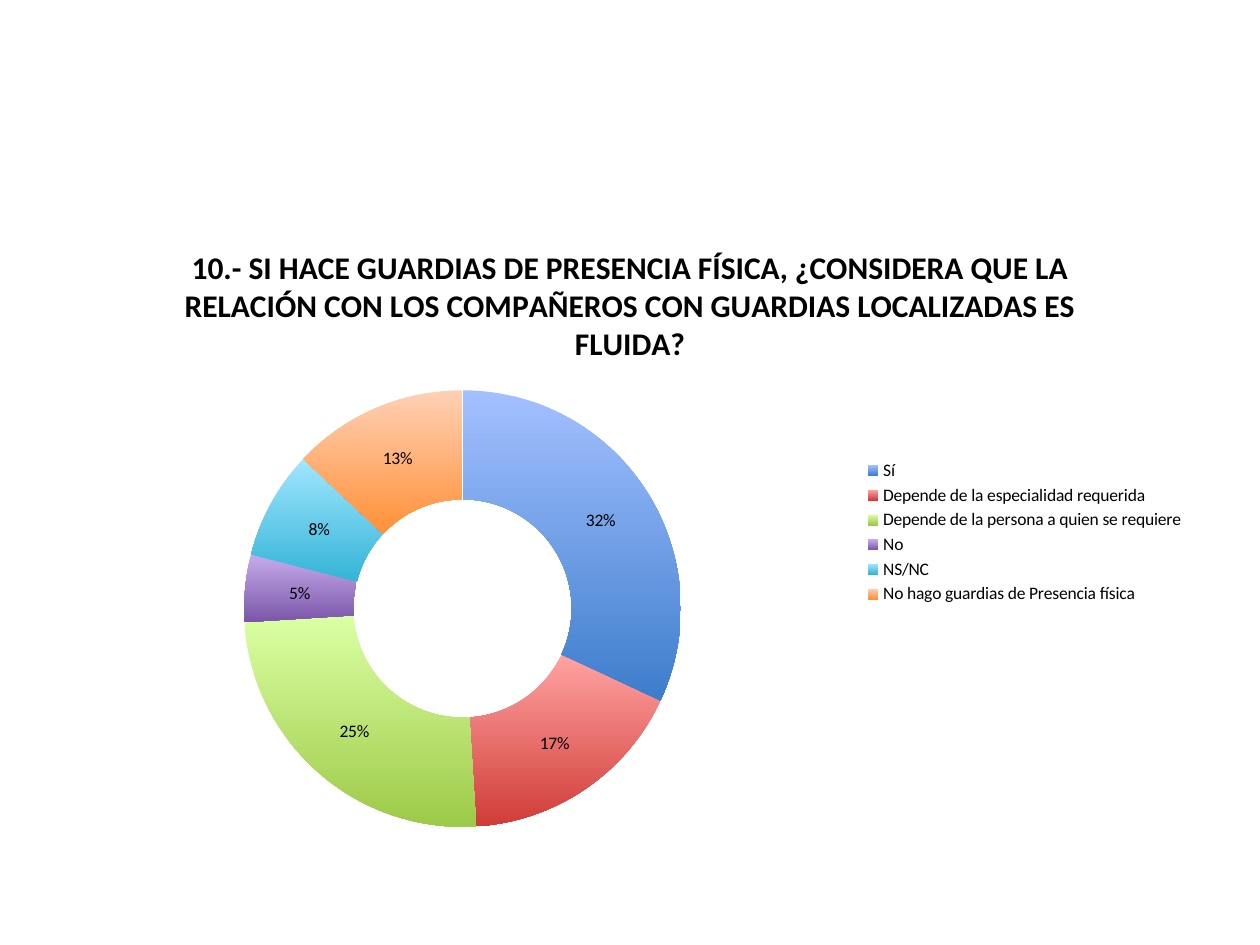
from dataclasses import dataclass

from pptx import Presentation
from pptx.chart.data import CategoryChartData
from pptx.dml.color import RGBColor
from pptx.enum.chart import XL_CHART_TYPE, XL_LEGEND_POSITION
from pptx.util import Inches, Pt

DOUGHNUT = XL_CHART_TYPE.DOUGHNUT
LEGEND_RIGHT = XL_LEGEND_POSITION.RIGHT
TOP_TO_BOTTOM = 270


@dataclass(frozen=True)
class Theme:
    font: str = "Calibri"
    text: str = "000000"
    title_size: int = 18
    body_size: int = 10


THEME = Theme()
QUESTION = (
    "10.- SI HACE GUARDIAS DE PRESENCIA FÍSICA, ¿CONSIDERA QUE LA RELACIÓN "
    "CON LOS COMPAÑEROS CON GUARDIAS LOCALIZADAS ES FLUIDA?"
)
# Answer, percentage, gradient colours from top to bottom
ANSWERS = [
    ("Sí", 32, ("A3C0FF", "3D7DCC")),
    ("Depende de la especialidad requerida", 17, ("FFA3A1", "D03C38")),
    ("Depende de la persona a quien se requiere", 25, ("DAFFA3", "9DCA48")),
    ("No", 5, ("C5ACEC", "7B56A8")),
    ("NS/NC", 8, ("A0E6FF", "34B4D6")),
    ("No hago guardias de Presencia física", 13, ("FFD0B5", "FF9138")),
]


def style_font(font, size=THEME.body_size, bold=False):
    font.name = THEME.font
    font.size = Pt(size)
    font.bold = bold
    font.color.rgb = RGBColor.from_string(THEME.text)


def add_text(frame, text, **style):
    para = frame.paragraphs[0]
    span = para.add_run()
    span.text = text
    style_font(span.font, **style)


def fill_gradient(fill, colours):
    fill.gradient()
    fill.gradient_angle = TOP_TO_BOTTOM
    for stop, colour in zip(fill.gradient_stops, colours):
        stop.color.rgb = RGBColor.from_string(colour)


def add_answer_chart(page, left, top, width, height):
    data = CategoryChartData()
    data.categories = [answer for answer, _, _ in ANSWERS]
    data.add_series(QUESTION, [share for _, share, _ in ANSWERS])
    chart = page.shapes.add_chart(DOUGHNUT, left, top, width, height, data).chart
    style_font(chart.font)

    chart.has_title = True
    add_text(chart.chart_title.text_frame, QUESTION,
             size=THEME.title_size, bold=True)
    chart.chart_title.include_in_layout = False

    chart.has_legend = True
    chart.legend.position = LEGEND_RIGHT
    chart.legend.include_in_layout = False
    style_font(chart.legend.font)

    plot = chart.plots[0]
    plot.vary_by_categories = True
    plot.has_data_labels = True
    labels = plot.data_labels
    labels.show_percentage = True
    labels.show_value = False
    labels.number_format = "0%"
    labels.number_format_is_linked = False
    style_font(labels.font)

    for index, (_, _, colours) in enumerate(ANSWERS):
        slice_format = plot.series[0].points[index].format
        fill_gradient(slice_format.fill, colours)
        slice_format.line.fill.background()


def main():
    deck = Presentation()
    deck.slide_width, deck.slide_height = Inches(10), Inches(7.5)
    page = deck.slides.add_slide(deck.slide_layouts[6])
    add_answer_chart(page, Inches(0.5), Inches(1.75), Inches(9), Inches(4.95))
    deck.save("out.pptx")


if __name__ == "__main__":
    main()
